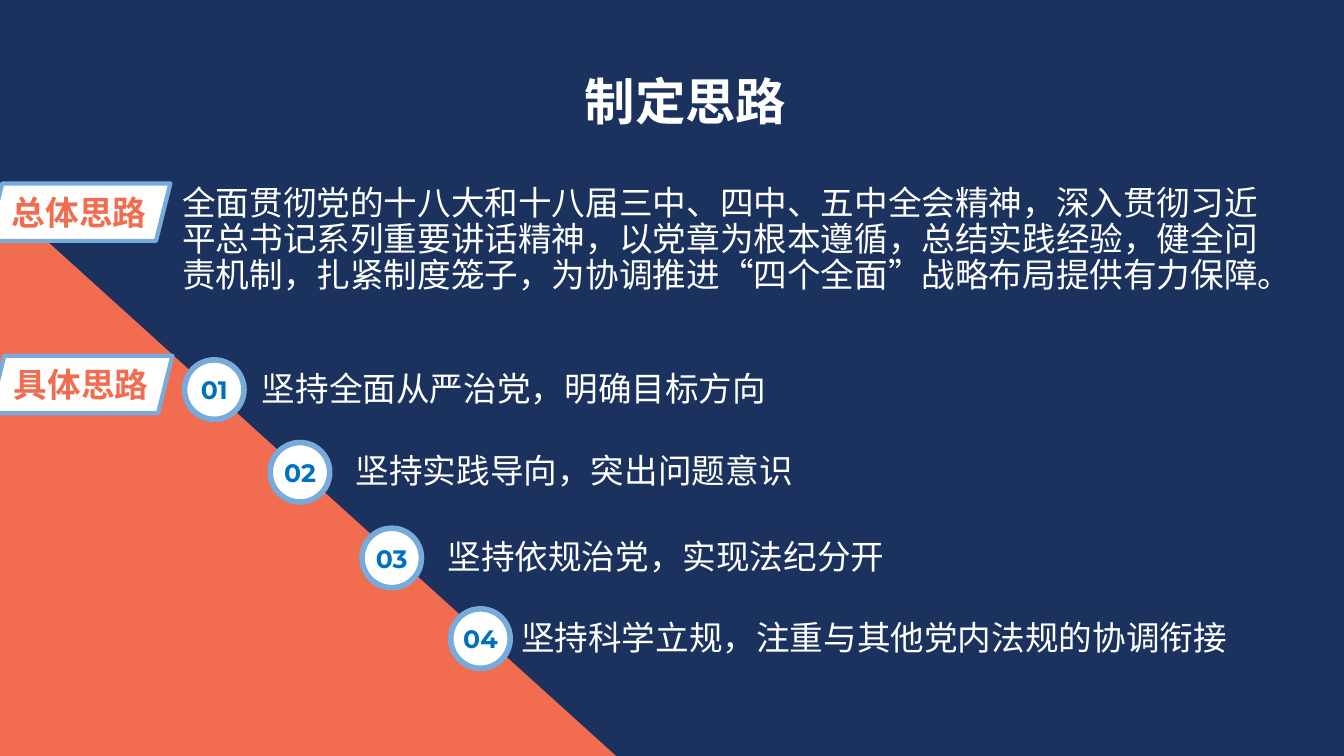
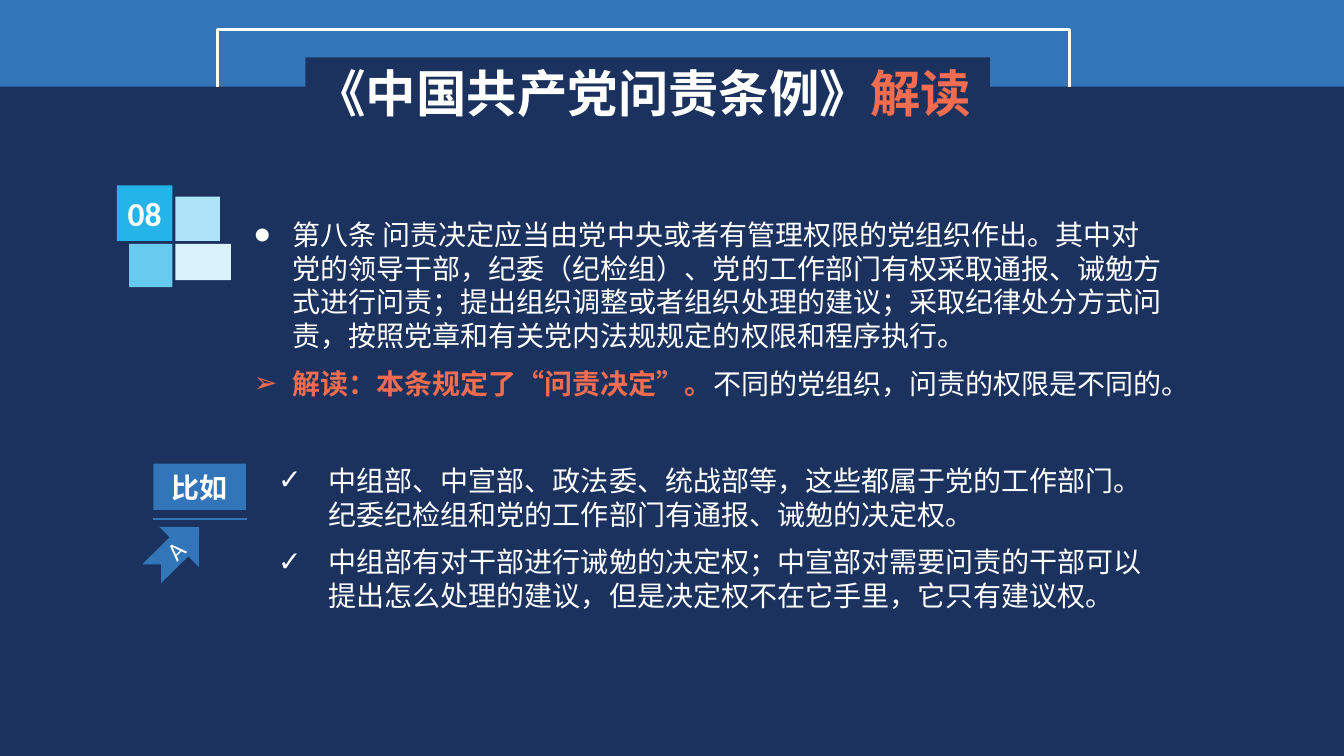
"""Build two slides on the accountability regulations."""
from lxml import etree
from pptx import Presentation
from pptx.dml.color import RGBColor
from pptx.enum import shapes, text
from pptx.oxml.ns import qn
from pptx.util import Inches, Pt

NAVY = RGBColor(0x1B, 0x32, 0x5F)
CORAL = RGBColor(0xF2, 0x6C, 0x4F)
WHITE = RGBColor(0xFF, 0xFF, 0xFF)
RING = RGBColor(0x76, 0xAB, 0xDC)
NUMBER = RGBColor(0x00, 0x70, 0xC0)
BLUE = RGBColor(0x32, 0x75, 0xB8)
CYAN = RGBColor(0x25, 0xB4, 0xE9)
TILES = [
    ((1.74, 1.95, 0.44, 0.44), RGBColor(0xAC, 0xE3, 0xF6)),
    ((1.28, 2.42, 0.43, 0.43), RGBColor(0x67, 0xCB, 0xEF)),
    ((1.74, 2.42, 0.55, 0.36), RGBColor(0xD9, 0xF2, 0xFB)),
]
CJK = "Noto Sans CJK SC"
MSO = shapes.MSO_SHAPE
CENTER = text.PP_ALIGN.CENTER
WIDTH, HEIGHT = 13.33, 7.5

TAGS = [("总体思路", -0.12, 1.82), ("具体思路", -0.1, 3.53)]
OVERVIEW = (
    "全面贯彻党的十八大和十八届三中、四中、五中全会精神，深入贯彻习近平总书记系列重要讲话精神，"
    "以党章为根本遵循，总结实践经验，健全问责机制，扎紧制度笼子，"
    "为协调推进“四个全面”战略布局提供有力保障。"
)
STEPS = [
    ("坚持全面从严治党，明确目标方向", 1.83, 3.57, 2.5),
    ("坚持实践导向，突出问题意识", 2.68, 4.39, 3.43),
    ("坚持依规治党，实现法纪分开", 3.59, 5.24, 4.34),
    ("坚持科学立规，注重与其他党内法规的协调衔接", 4.47, 6.04, 5.07),
]
ARTICLE = [
    ("●", [("第八条 问责决定应当由党中央或者有管理权限的党组织作出。其中对党的领导干部，"
           "纪委（纪检组）、党的工作部门有权采取通报、诫勉方式进行问责；"
           "提出组织调整或者组织处理的建议；采取纪律处分方式问责，"
           "按照党章和有关党内法规规定的权限和程序执行。", {})]),
    ("➢", [("解读：本条规定了“问责决定”。", {"color": CORAL, "bold": True}),
           ("不同的党组织，问责的权限是不同的。", {})]),
]
EXAMPLES = [
    ("✓", [("中组部、中宣部、政法委、统战部等，这些都属于党的工作部门。"
           "纪委纪检组和党的工作部门有通报、诫勉的决定权。", {})]),
    ("✓", [("中组部有对干部进行诫勉的决定权；中宣部对需要问责的干部可以提出怎么处理的建议，"
           "但是决定权不在它手里，它只有建议权。", {})]),
]


def add_run(p, content, size=24, color=WHITE, bold=False, font=CJK):
    r = p.add_run()
    r.text = content
    f = r.font
    f.size, f.bold, f.name = Pt(size), bold, font
    f.color.rgb = color
    ea = etree.Element(qn("a:ea"), typeface=font)
    r._r.get_or_add_rPr().find(qn("a:latin")).addnext(ea)


def style(sp, fill=None, line=None, width=1):
    sp.shadow.inherit = False
    if fill is None:
        sp.fill.background()
    else:
        sp.fill.solid()
        sp.fill.fore_color.rgb = fill
    if line is None:
        sp.line.fill.background()
    else:
        sp.line.color.rgb = line
        sp.line.width = Pt(width)


def add_shape(slide, kind, box, fill, line=None, width=1, label=None, **fmt):
    sp = slide.shapes.add_shape(kind, *map(Inches, box))
    style(sp, fill, line, width)
    if label:
        tf = sp.text_frame
        tf.margin_left = tf.margin_right = tf.margin_top = tf.margin_bottom = 0
        tf.vertical_anchor = text.MSO_ANCHOR.MIDDLE
        p = tf.paragraphs[0]
        p.alignment = CENTER
        add_run(p, label, **fmt)
    return sp


def add_text(slide, box, paragraphs, pitch, indent=0, align=None, **fmt):
    tf = slide.shapes.add_textbox(*map(Inches, box)).text_frame
    tf.word_wrap = True
    for i, (bullet, runs) in enumerate(paragraphs):
        p = tf.add_paragraph() if i else tf.paragraphs[0]
        p.alignment = align
        p.line_spacing = Pt(pitch)
        if i:
            p.space_before = Pt(10)
        if bullet:
            pPr = p._p.get_or_add_pPr()
            pPr.set("marL", str(Inches(indent)))
            pPr.set("indent", str(-Inches(indent)))
            etree.SubElement(pPr, qn("a:buFont"), typeface="Calibri")
            etree.SubElement(pPr, qn("a:buChar"), char=bullet)
        for content, extra in runs:
            add_run(p, content, **{**fmt, **extra})
    return tf


def add_title(slide, box, runs):
    return add_text(slide, box, [(None, runs)], 56, align=CENTER, size=36, bold=True)


def add_outline(slide, points, closed, **look):
    corners = [(Inches(x), Inches(y)) for x, y in points]
    builder = slide.shapes.build_freeform(*corners[0])
    builder.add_line_segments(corners[1:], close=closed)
    style(builder.convert_to_shape(), **look)


def new_slide(prs):
    slide = prs.slides.add_slide(prs.slide_layouts[6])
    slide.background.fill.solid()
    slide.background.fill.fore_color.rgb = NAVY
    return slide


def build_approach(prs):
    slide = new_slide(prs)
    add_shape(slide, MSO.RIGHT_TRIANGLE, (0, 1.97, 6.11, 5.53), CORAL)
    add_title(slide, (5.33, 0.47, 2.94, 0.88), [("制定思路", {})])
    for label, x, y in TAGS:
        sp = add_shape(slide, MSO.PARALLELOGRAM, (x, y, 1.81, 0.57), WHITE, RING, 3,
                       label, color=CORAL, bold=True)
        sp.adjustments[0] = 0.25
    add_text(slide, (1.71, 1.8, 11.03, 1.19), [(None, [(OVERVIEW, {})])], 25.7)
    for i, (step, x, y, text_x) in enumerate(STEPS, 1):
        add_shape(slide, MSO.OVAL, (x, y, 0.59, 0.59), WHITE, RING, 4, f"{i:02}",
                  size=18, color=NUMBER, bold=True, font="Montserrat")
        add_text(slide, (text_x, y + 0.07, 7.44, 0.46), [(None, [(step, {})])], 25.7)


def build_article(prs):
    slide = new_slide(prs)
    add_outline(slide, [(0, 0), (WIDTH, 0), (WIDTH, 0.86), (9.82, 0.86), (9.82, 0.57),
                        (3.03, 0.57), (3.03, 0.86), (0, 0.86)], True, fill=BLUE)
    add_outline(slide, [(2.16, 0.86), (2.16, 0.29), (10.61, 0.29), (10.61, 0.86)], False,
                line=WHITE, width=2.25)
    tf = add_title(slide, (2.88, 0.38, 7, 0.89),
                   [("《中国共产党问责条例》", {}), ("解读", {"color": CORAL})])
    tf.vertical_anchor = text.MSO_ANCHOR.BOTTOM

    add_shape(slide, MSO.RECTANGLE, (1.16, 1.84, 0.55, 0.55), CYAN, label="08",
              color=WHITE, bold=True, font="Calibri")
    for box, color in TILES:
        add_shape(slide, MSO.RECTANGLE, box, color)
    add_text(slide, (2.42, 2.11, 9.23, 1.92), ARTICLE, 24, indent=0.38, size=20)

    cn = slide.shapes.add_connector(shapes.MSO_CONNECTOR.STRAIGHT,
                                    *map(Inches, (1.52, 5.15, 2.45, 5.15)))
    cn.line.color.rgb = BLUE
    cn.line.width = Pt(1)
    etree.SubElement(cn._element.spPr, qn("a:effectLst"))
    arrow = add_shape(slide, MSO.NOTCHED_RIGHT_ARROW, (1.41, 5.18, 0.66, 0.56), BLUE,
                      label="A", size=18, color=WHITE, font="Calibri")
    arrow.adjustments[0] = 0.47
    arrow.rotation = 315.4
    add_shape(slide, MSO.RECTANGLE, (1.52, 4.6, 0.92, 0.46), BLUE, label="比如",
              size=20, color=WHITE, bold=True)
    add_text(slide, (2.66, 4.55, 8.81, 2.06), EXAMPLES, 24, indent=0.5, size=20)


def main():
    prs = Presentation()
    prs.slide_width, prs.slide_height = Inches(WIDTH), Inches(HEIGHT)
    build_approach(prs)
    build_article(prs)
    prs.save("out.pptx")


if __name__ == "__main__":
    main()
